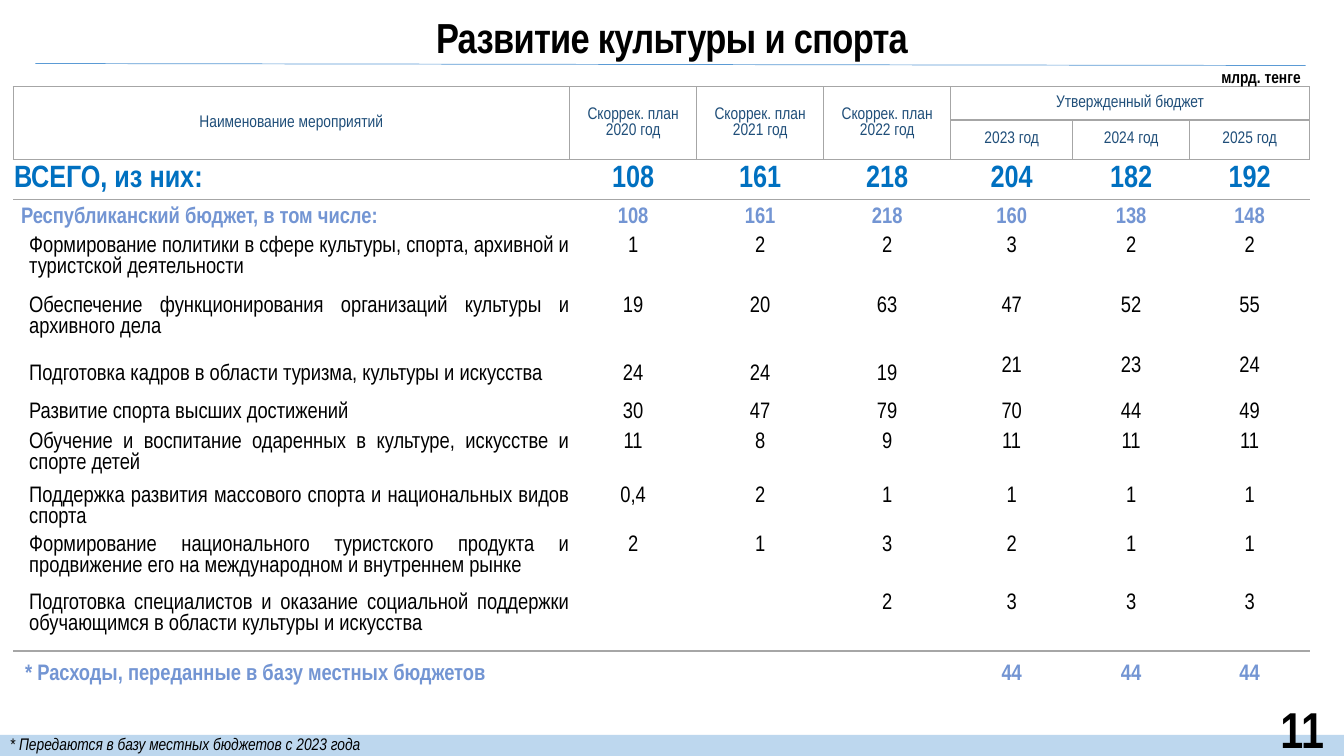
from dataclasses import dataclass

from lxml import etree
from pptx import Presentation
from pptx import util as u
from pptx.dml.color import RGBColor
from pptx.enum import shapes, text
from pptx.oxml import ns

FONT = "Arial Narrow"
BLACK, NAVY, BLUE, PERIWINKLE = "000000", "1F4E79", "0070C0", "7395D3"
GRAY, PALE_BLUE, RULE_BLUE = "A6A6A6", "BDD7EE", "5B9BD5"
PLAIN_TABLE = "{2D5ABB26-0587-4C30-8999-92F81FD0307C}"
TOP, MIDDLE = text.MSO_ANCHOR.TOP, text.MSO_ANCHOR.MIDDLE
LEFT, CENTER = text.PP_ALIGN.LEFT, text.PP_ALIGN.CENTER
RIGHT, JUSTIFY = text.PP_ALIGN.RIGHT, text.PP_ALIGN.JUSTIFY


@dataclass(frozen=True)
class Style:
    size: float
    color: str = BLACK
    bold: bool = False
    italic: bool = False
    align: text.PP_ALIGN = CENTER
    line_spacing: float = 1.0
    tracking: float = 0


@dataclass(frozen=True)
class Caption:
    words: str
    box: tuple[float, float, float, float]
    style: Style


@dataclass(frozen=True)
class BudgetRow:
    label: str
    amounts: str  # one per year, "-" where there is none
    height: float
    size: float = 16
    color: str = BLACK
    bold: bool = False
    align: text.PP_ALIGN = JUSTIFY
    indent: float = 0.16
    label_anchor: text.MSO_ANCHOR = TOP
    plan_anchor: text.MSO_ANCHOR = TOP
    approved_anchor: text.MSO_ANCHOR = TOP
    borders: str = ""


CENTERED = dict(label_anchor=MIDDLE, plan_anchor=MIDDLE, approved_anchor=MIDDLE)
SUMMARY = dict(bold=True, align=LEFT, **CENTERED)

COLUMN_WIDTHS = [5.52, 1.26, 1.26, 1.26, 1.21, 1.16, 1.19]
HEADER_HEIGHTS = [0.33, 0.39]
PLAN_YEARS = [2020, 2021, 2022]
APPROVED_YEARS = [2023, 2024, 2025]
FIRST_APPROVED = 1 + len(PLAN_YEARS)

BUDGET = [
    BudgetRow("ВСЕГО, из них:", "108 161 218 204 182 192", 0.4, 22, BLUE,
              indent=0.01, borders="T", **SUMMARY),
    BudgetRow("Республиканский бюджет, в том числе:", "108 161 218 160 138 148", 0.36,
              color=PERIWINKLE, indent=0.08, **SUMMARY),
    BudgetRow("Формирование политики в сфере культуры, спорта, архивной и туристской деятельности",
              "1 2 2 3 2 2", 0.6),
    BudgetRow("Обеспечение функционирования организаций культуры и архивного дела",
              "19 20 63 47 52 55", 0.59),
    BudgetRow("Подготовка кадров в области туризма, культуры и искусства",
              "24 24 19 21 23 24", 0.37, label_anchor=MIDDLE, plan_anchor=MIDDLE),
    BudgetRow("Развитие спорта высших достижений", "30 47 79 70 44 49", 0.39, **CENTERED),
    BudgetRow("Обучение и воспитание одаренных в культуре, искусстве и спорте детей",
              "11 8 9 11 11 11", 0.53),
    BudgetRow("Поддержка развития массового спорта и национальных видов спорта",
              "0,4 2 1 1 1 1", 0.49),
    BudgetRow("Формирование национального туристского продукта и продвижение его "
              "на международном и внутреннем рынке", "2 1 3 2 1 1", 0.58),
    BudgetRow("Подготовка специалистов и оказание социальной поддержки обучающимся "
              "в области культуры и искусства", "- - 2 3 3 3", 0.57, borders="B"),
    BudgetRow("* Расходы, переданные в базу местных бюджетов", "- - - 44 44 44", 0.47,
              color=PERIWINKLE, indent=0.12, borders="T", **SUMMARY),
]

CAPTIONS = [
    Caption("11", (11.8, 7.03, 1.43, 0.4), Style(36, bold=True, align=RIGHT)),
    Caption("Развитие культуры и спорта", (0, 0.07, 13.33, 0.54),
            Style(30, bold=True, line_spacing=1.1, tracking=-0.5)),
    Caption("млрд. тенге", (11.8, 0.51, 1.2, 0.48),
            Style(12, bold=True, align=RIGHT, line_spacing=1.1)),
    Caption("* Передаются в базу местных бюджетов с 2023 года", (0, 7.19, 12.53, 0.4),
            Style(12, italic=True, align=JUSTIFY, line_spacing=0.9)),
]


def rgb(code: str) -> RGBColor:
    return RGBColor.from_string(code)


def write(frame, words: str, style: Style) -> None:
    frame.text = words
    for paragraph in frame.paragraphs:
        paragraph.alignment = style.align
        paragraph.line_spacing = style.line_spacing
        for run in paragraph.runs:
            run.font.name = FONT
            run.font.size = u.Pt(style.size)
            run.font.bold = style.bold
            run.font.italic = style.italic
            run.font.color.rgb = rgb(style.color)
            if style.tracking:
                run._r.get_or_add_rPr().set("spc", str(round(style.tracking * 100)))


def draw_caption(slide, caption: Caption) -> None:
    frame = slide.shapes.add_textbox(*map(u.Inches, caption.box)).text_frame
    frame.word_wrap = True
    frame.vertical_anchor = MIDDLE
    write(frame, caption.words, caption.style)


def draw_footer_band(slide) -> None:
    band = slide.shapes.add_shape(shapes.MSO_SHAPE.RECTANGLE, u.Inches(0), u.Inches(7.29),
                                  u.Inches(13.33), u.Inches(0.21))
    band.shadow.inherit = False
    band.fill.solid()
    band.fill.fore_color.rgb = rgb(PALE_BLUE)
    band.line.fill.background()


def draw_title_rule(slide) -> None:
    rule = slide.shapes.add_connector(shapes.MSO_CONNECTOR.STRAIGHT, u.Inches(0.35),
                                      u.Inches(0.63), u.Inches(12.95), u.Inches(0.65))
    rule.line.color.rgb = rgb(RULE_BLUE)
    rule.line.width = u.Pt(0.5)
    etree.SubElement(rule._element.spPr, ns.qn("a:effectLst"))


def prepare_cell(cell, borders: str) -> None:
    """Clear the margins and fill, and line the sides named by L, R, T and B."""
    cell.margin_left = cell.margin_right = cell.margin_top = cell.margin_bottom = 0
    properties = cell._tc.get_or_add_tcPr()
    for side in borders:
        line = etree.SubElement(properties, ns.qn(f"a:ln{side}"), w=str(u.Pt(1)))
        fill = etree.SubElement(line, ns.qn("a:solidFill"))
        etree.SubElement(fill, ns.qn("a:srgbClr"), val=GRAY)
    cell.fill.background()


def fill_header(table) -> None:
    last = len(COLUMN_WIDTHS) - 1
    headings = {(0, 0): "Наименование мероприятий", (0, FIRST_APPROVED): "Утвержденный бюджет"}
    headings |= {(0, c): f"Скоррек. план\n{year} год" for c, year in enumerate(PLAN_YEARS, 1)}
    headings |= {(1, c): f"{year} год" for c, year in enumerate(APPROVED_YEARS, FIRST_APPROVED)}
    for column in range(FIRST_APPROVED):
        table.cell(0, column).merge(table.cell(1, column))
    table.cell(0, FIRST_APPROVED).merge(table.cell(0, last))
    for position, words in headings.items():
        cell = table.cell(*position)
        cell.vertical_anchor = MIDDLE
        write(cell.text_frame, words, Style(12, NAVY))


def fill_budget_row(table, index: int, row: BudgetRow) -> None:
    for column, words in enumerate([row.label, *row.amounts.split()]):
        if words == "-":
            continue
        cell = table.cell(index, column)
        align = CENTER
        cell.vertical_anchor = row.plan_anchor if column < FIRST_APPROVED else row.approved_anchor
        if column == 0:
            align = row.align
            cell.vertical_anchor = row.label_anchor
            cell.margin_left = u.Inches(row.indent)
        write(cell.text_frame, words, Style(row.size, row.color, row.bold, align=align))


def draw_budget_table(slide) -> None:
    heights = HEADER_HEIGHTS + [row.height for row in BUDGET]
    borders = ["LRTB"] * len(HEADER_HEIGHTS) + [row.borders for row in BUDGET]
    table = slide.shapes.add_table(len(heights), len(COLUMN_WIDTHS), u.Inches(0.13),
                                   u.Inches(0.86), u.Inches(sum(COLUMN_WIDTHS)),
                                   u.Inches(sum(heights))).table
    table.first_row = table.horz_banding = False
    table._tbl.tblPr.find(ns.qn("a:tableStyleId")).text = PLAIN_TABLE
    for column, width in zip(table.columns, COLUMN_WIDTHS):
        column.width = u.Inches(width)
    for row, height, sides in zip(table.rows, heights, borders):
        row.height = u.Inches(height)
        for cell in row.cells:
            prepare_cell(cell, sides)
    fill_header(table)
    for index, budget_row in enumerate(BUDGET, len(HEADER_HEIGHTS)):
        fill_budget_row(table, index, budget_row)


def main() -> None:
    deck = Presentation()
    deck.slide_width, deck.slide_height = u.Inches(13.33), u.Inches(7.5)
    slide = deck.slides.add_slide(deck.slide_layouts[6])
    draw_footer_band(slide)
    draw_budget_table(slide)
    draw_title_rule(slide)
    for caption in CAPTIONS:
        draw_caption(slide, caption)
    deck.save("out.pptx")


if __name__ == "__main__":
    main()
